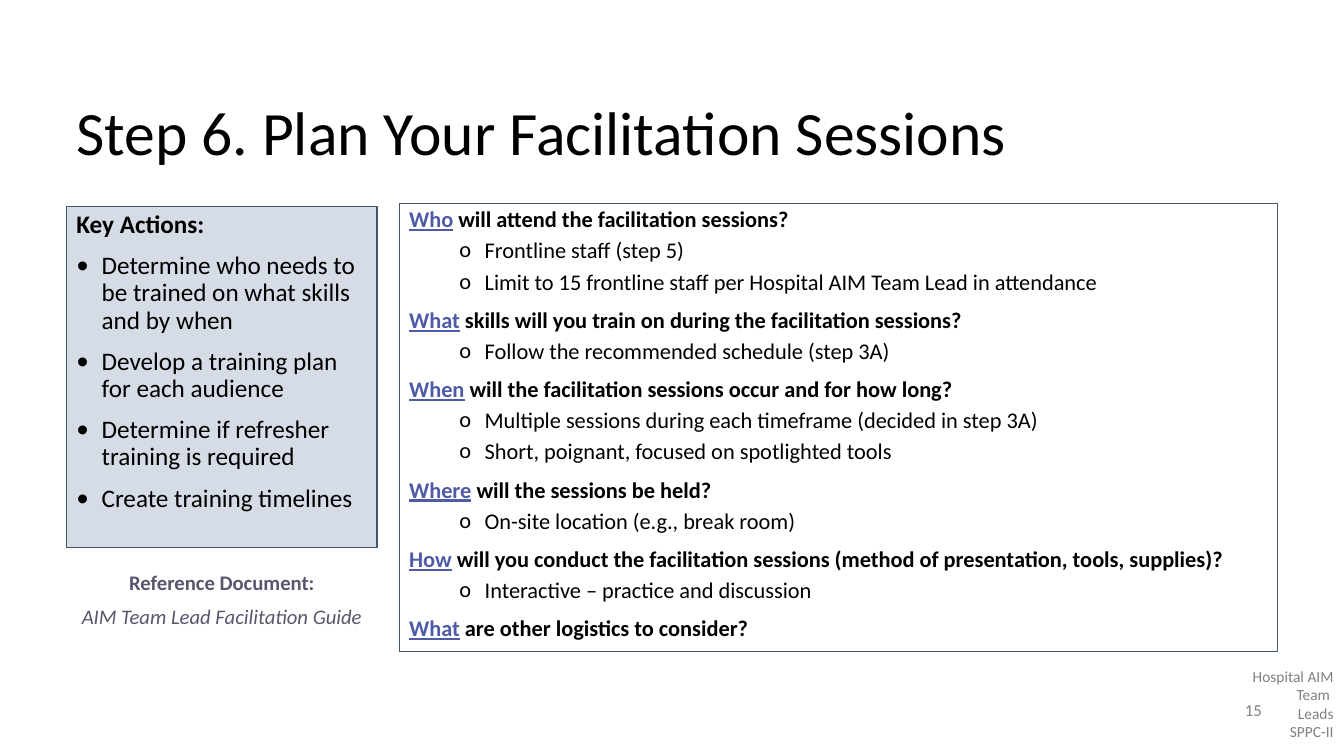
"""Build the slide on planning facilitation sessions."""
from dataclasses import dataclass

from lxml import etree
from pptx import Presentation
from pptx.dml.color import RGBColor
from pptx.enum import shapes, text
from pptx.oxml.ns import qn
from pptx.util import Pt


@dataclass(frozen=True)
class Theme:
    """Colours, font and type sizes of the slide."""
    font: str = "Calibri"
    ink: str = "000000"
    accent: str = "505BA7"
    muted: str = "57576E"
    grey: str = "808080"
    line: str = "44546A"
    panel: str = "D6DCE5"
    paper: str = "FFFFFF"
    title: float = 44
    action: float = 18
    question: float = 16
    reference: float = 14.8
    number: float = 12
    footer: float = 11


THEME = Theme()

ACTIONS = [
    "Determine who needs to be trained on what skills and by when",
    "Develop a training plan for each audience",
    "Determine if refresher training is required",
    "Create training timelines",
]

QUESTIONS = [
    ("Who", "will attend the facilitation sessions?",
     ["Frontline staff (step 5)",
      "Limit to 15 frontline staff per Hospital AIM Team Lead in attendance"]),
    ("What", "skills will you train on during the facilitation sessions?",
     ["Follow the recommended schedule (step 3A)"]),
    ("When", "will the facilitation sessions occur and for how long?",
     ["Multiple sessions during each timeframe (decided in step 3A)",
      "Short, poignant, focused on spotlighted tools"]),
    ("Where", "will the sessions be held?",
     ["On-site location (e.g., break room)"]),
    ("How", "will you conduct the facilitation sessions "
     "(method of presentation, tools, supplies)?",
     ["Interactive – practice and discussion"]),
    ("What", "are other logistics to consider?", []),
]


def add_box(page, left, top, width, height, fill=None, middle=False):
    """Add a wrapping text area, outlined when a fill is given."""
    place = [Pt(length) for length in (left, top, width, height)]
    if fill:
        box = page.shapes.add_shape(shapes.MSO_SHAPE.RECTANGLE, *place)
        box.shadow.inherit = False
        box.fill.solid()
        box.fill.fore_color.rgb = RGBColor.from_string(fill)
        box.line.color.rgb = RGBColor.from_string(THEME.line)
        box.line.width = Pt(0.75)
    else:
        box = page.shapes.add_textbox(*place)
    frame = box.text_frame
    frame.word_wrap = True
    anchor = text.MSO_ANCHOR
    frame.vertical_anchor = anchor.MIDDLE if middle else anchor.TOP
    return frame


def add_para(frame, before=0, spacing=1.0, align=text.PP_ALIGN.LEFT):
    """Return the next paragraph, reusing the empty first one."""
    first = frame.paragraphs[0]
    if first.runs:
        para = frame.add_paragraph()
        para.space_before = Pt(before)
    else:
        para = first
    para.line_spacing = spacing
    para.alignment = align
    return para


def add_span(para, words, size, color=THEME.ink, **style):
    """Add a run with its size, colour and styles such as bold."""
    span = para.add_run()
    span.text = words
    span.font.name = THEME.font
    span.font.size = Pt(size)
    span.font.color.rgb = RGBColor.from_string(color)
    for name, value in style.items():
        setattr(span.font, name, value)


def add_bullet(frame, words, size, mark, indent, before):
    """Add a paragraph with a hanging bullet."""
    para = add_para(frame, before, 0.9)
    props = para._p.get_or_add_pPr()
    props.set("marL", str(Pt(indent)))
    props.set("indent", str(Pt(-18)))
    etree.SubElement(props, qn("a:buFont")).set("typeface", THEME.font)
    etree.SubElement(props, qn("a:buChar")).set("char", mark)
    add_span(para, words, size)


def add_actions(page):
    """Add the shaded panel of key actions."""
    frame = add_box(page, 47.5, 147.6, 221.8, 243.4, THEME.panel)
    add_span(add_para(frame, spacing=0.9), "Key Actions:", THEME.action, bold=True)
    for action in ACTIONS:
        add_bullet(frame, action, THEME.action, "•", 18, 10)


def add_reference(page):
    """Add the reference document below the key actions."""
    frame = add_box(page, 47.5, 406.8, 221.8, 46.8)
    for words, style in (("Reference Document:", "bold"),
                         ("AIM Team Lead Facilitation Guide", "italic")):
        para = add_para(frame, 10, 0.8, text.PP_ALIGN.CENTER)
        add_span(para, words, THEME.reference, THEME.muted, **{style: True})


def add_questions(page):
    """Add the outlined panel of planning questions."""
    frame = add_box(page, 285.1, 145.4, 627.1, 319.7, THEME.paper)
    for lead, rest, answers in QUESTIONS:
        para = add_para(frame, 10, 0.9)
        add_span(para, lead, THEME.question, THEME.accent, bold=True, underline=True)
        add_span(para, f" {rest}", THEME.question, bold=True)
        for answer in answers:
            add_bullet(frame, answer, THEME.question, "o", 54, 5)


def add_footer(page):
    """Add the running footer and the slide number."""
    frame = add_box(page, 876.2, 473, 83.5, 53.4)
    for words in ("Hospital AIM Team ", "Leads", "SPPC-II"):
        para = add_para(frame, align=text.PP_ALIGN.RIGHT)
        add_span(para, words, THEME.footer, THEME.grey)
    frame = add_box(page, 878.4, 492.5, 33.8, 28.8, middle=True)
    para = add_para(frame, align=text.PP_ALIGN.CENTER)
    add_span(para, "15", THEME.number, THEME.grey)


def main():
    """Build and save the deck."""
    deck = Presentation()
    deck.slide_width, deck.slide_height = Pt(960), Pt(540)
    page = deck.slides.add_slide(deck.slide_layouts[6])
    title = add_box(page, 47.5, 60.5, 857.5, 72, middle=True)
    add_span(add_para(title, spacing=0.9), "Step 6. Plan Your Facilitation Sessions",
             THEME.title)
    add_actions(page)
    add_reference(page)
    add_questions(page)
    add_footer(page)
    deck.save("out.pptx")


if __name__ == "__main__":
    main()
